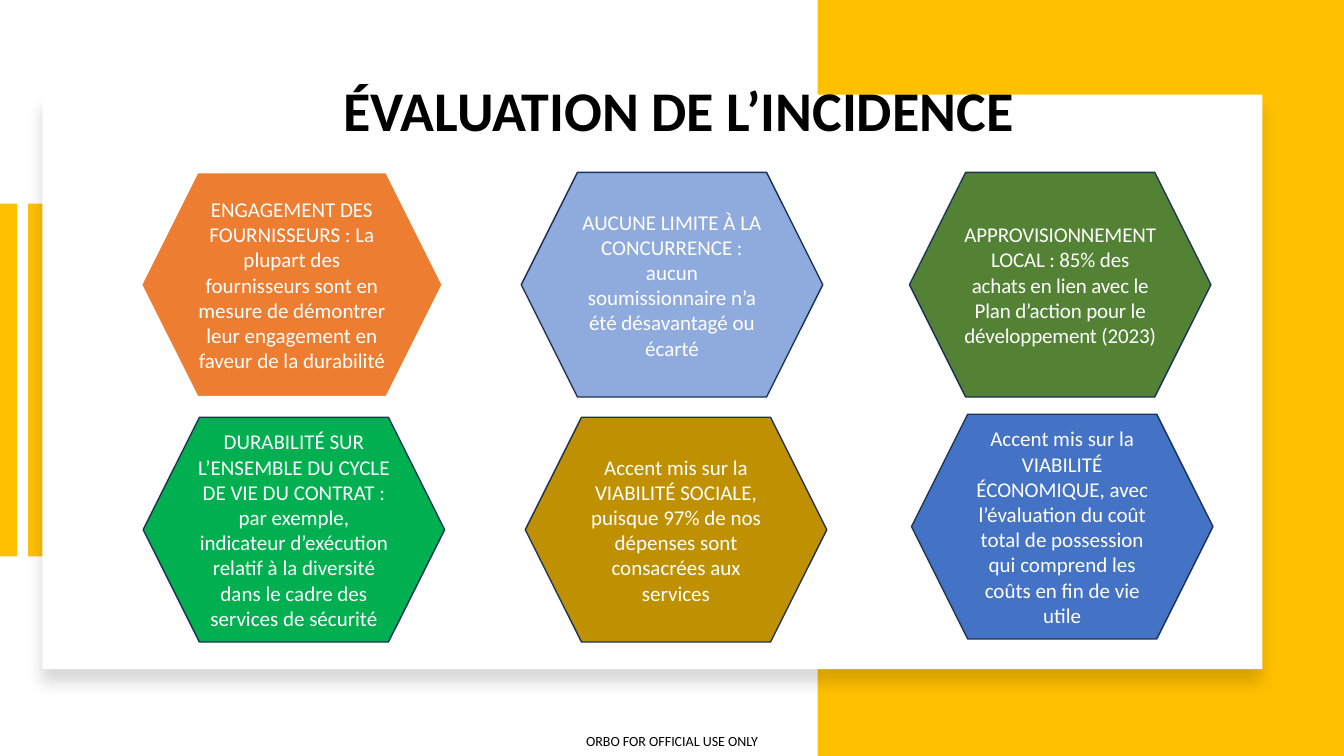
from lxml import etree
from pptx import Presentation
from pptx import util as u
from pptx.dml.color import RGBColor
from pptx.enum import shapes, text
from pptx.oxml import ns

COLOURS = {
    "white": "FFFFFF", "black": "000000", "gold": "FFC000", "navy": "1E3256",
    "orange": "ED7D31", "sky": "8FAADC", "forest": "548235",
    "green": "00B050", "ochre": "BF9000", "blue": "4472C4",
}
FRAME_FORMAT = {"word_wrap": True, "vertical_anchor": text.MSO_ANCHOR.MIDDLE}
NO_MARGINS = dict.fromkeys(
    ("margin_left", "margin_right", "margin_top", "margin_bottom"), 0)
HEXAGON_SIZE = (2.99, 2.23)
HEXAGONS = [
    (1.4, 1.71, "orange", "white", 1.5, 0,
     "ENGAGEMENT DES FOURNISSEURS : La plupart des fournisseurs sont en "
     "mesure de démontrer leur engagement en faveur de la durabilité"),
    (5.17, 1.71, "sky", "navy", 1, 0,
     "AUCUNE LIMITE À LA CONCURRENCE : aucun soumissionnaire n’a été "
     "désavantagé ou écarté"),
    (9.02, 1.71, "forest", "navy", 1, -10,
     "APPROVISIONNEMENT LOCAL : 85% des achats en lien avec le Plan "
     "d’action pour le développement (2023)"),
    (1.42, 4.14, "green", "navy", 1, 0,
     "DURABILITÉ SUR L’ENSEMBLE DU CYCLE DE VIE DU CONTRAT : par exemple, "
     "indicateur d’exécution relatif à la diversité dans le cadre des "
     "services de sécurité"),
    (5.21, 4.14, "ochre", "navy", 1, 0,
     "Accent mis sur la VIABILITÉ SOCIALE, puisque 97% de nos dépenses "
     "sont consacrées aux services"),
    (9.04, 4.11, "blue", "navy", 1, 0,
     "Accent mis sur la VIABILITÉ ÉCONOMIQUE, avec l’évaluation du coût "
     "total de possession qui comprend les coûts en fin de vie utile"),
]


def colour(name):
    return RGBColor.from_string(COLOURS[name])


def apply(target, values):
    for name, value in values.items():
        setattr(target, name, value)


def write(shape, words, size, ink, bold=False, spacing=0, **frame_values):
    frame = shape.text_frame
    apply(frame, {**FRAME_FORMAT, **frame_values})
    para = frame.paragraphs[0]
    para.alignment = text.PP_ALIGN.CENTER
    span = para.add_run()
    span.text = words
    apply(span.font, {"name": "Calibri", "size": u.Pt(size), "bold": bold})
    span.font.color.rgb = colour(ink)
    if spacing:
        span.font._element.set("spc", str(spacing))
    return para


def add_block(page, kind, place, fill):
    block = page.shapes.add_shape(kind, *map(u.Inches, place))
    block.shadow.inherit = False
    block.fill.solid()
    block.fill.fore_color.rgb = colour(fill)
    block.line.fill.background()
    return block


def add_panel(page, place, fill):
    return add_block(page, shapes.MSO_SHAPE.RECTANGLE, place, fill)


def add_soft_shadow(block):
    effects = block._element.spPr.find(ns.qn("a:effectLst"))
    shadow = etree.SubElement(
        effects, ns.qn("a:outerShdw"), blurRad=str(u.Pt(11)),
        dist=str(u.Pt(10)), dir="5400000", algn="t", rotWithShape="0")
    tint = etree.SubElement(shadow, ns.qn("a:srgbClr"), val=COLOURS["black"])
    etree.SubElement(tint, ns.qn("a:alpha"), val="15000")


def add_hexagon(page, left, top, fill, edge, weight, spacing, words):
    hexagon = add_block(page, shapes.MSO_SHAPE.HEXAGON,
                        (left, top, *HEXAGON_SIZE), fill)
    hexagon.line.color.rgb = colour(edge)
    hexagon.line.width = u.Pt(weight)
    write(hexagon, words, 15, "white", spacing=spacing)


def add_footer(page):
    box = page.shapes.add_textbox(*map(u.Inches, (5.64, 7.21, 2.05, 0.29)))
    write(box, "ORBO FOR OFFICIAL USE ONLY", 10, "black", **NO_MARGINS)


def place_title(page):
    title = page.shapes.title
    apply(title, {"left": u.Inches(0.98), "top": u.Inches(0.4),
                  "width": u.Inches(11.5), "height": u.Inches(1.45)})
    para = write(title, "ÉVALUATION DE L’INCIDENCE", 40, "black", bold=True)
    para.line_spacing = 0.9
    page.shapes._spTree.append(title._element)


def main():
    deck = Presentation()
    apply(deck, {"slide_width": u.Inches(13.33),
                 "slide_height": u.Inches(7.5)})
    page = deck.slides.add_slide(deck.slide_layouts[5])
    add_footer(page)
    for left in (0, 0.28):
        add_panel(page, (left, 2.02, 0.17, 3.5), "gold")
    add_panel(page, (8.11, 0, 5.22, 7.5), "gold")
    add_soft_shadow(add_panel(page, (0.42, 0.94, 12.1, 5.7), "white"))
    for hexagon in HEXAGONS:
        add_hexagon(page, *hexagon)
    place_title(page)
    deck.save("out.pptx")


if __name__ == "__main__":
    main()
